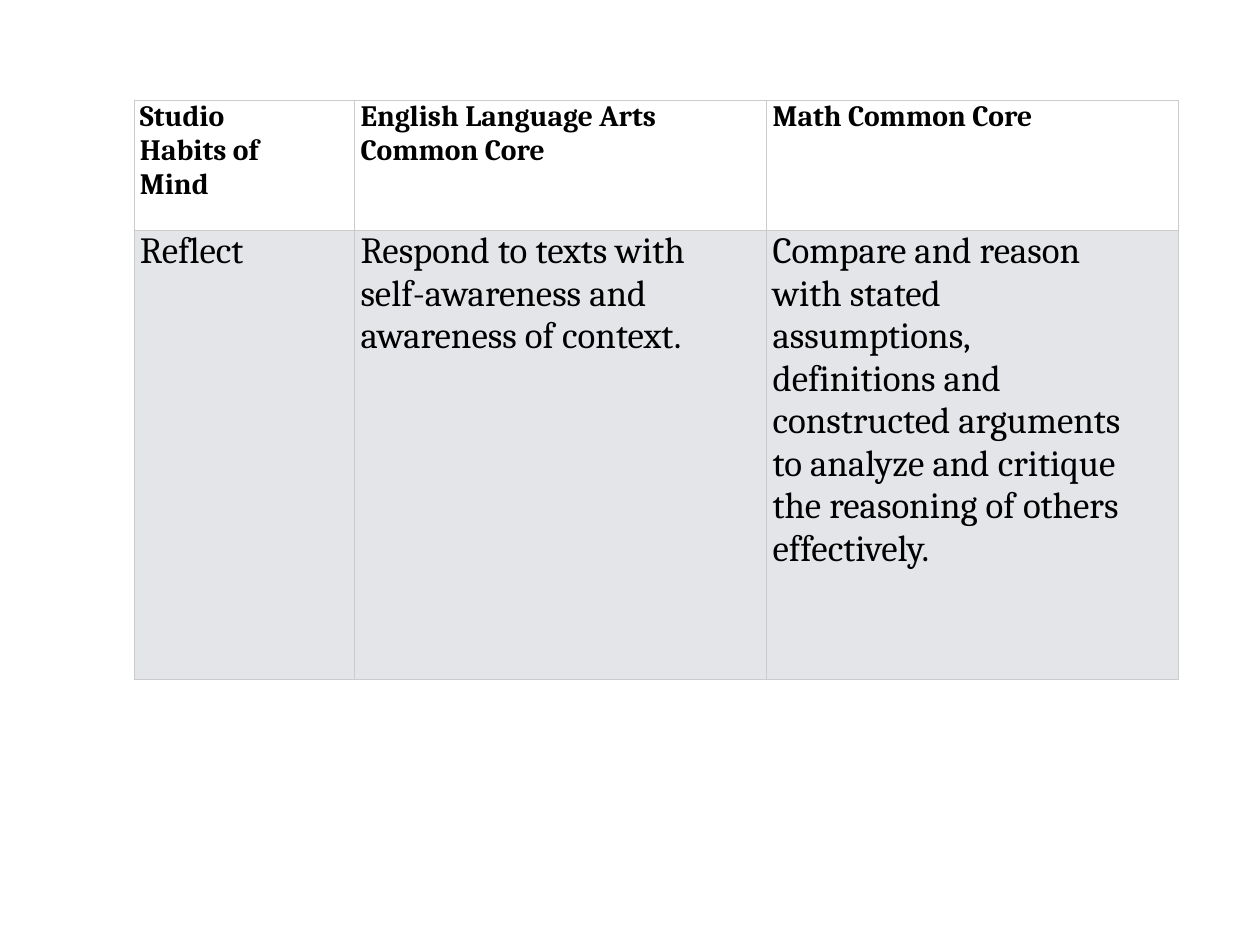
"""Build a slide with a table linking a studio habit to Common Core standards."""
import lxml.etree
import pptx
import pptx.dml.color
import pptx.oxml.ns
import pptx.util

Inches = pptx.util.Inches
Pt = pptx.util.Pt
qn = pptx.oxml.ns.qn

COLORS = {"text": "000000", "header": "FFFFFF", "body": "E3E5E8", "border": "CBCBCB"}
COL_WIDTHS = [2.49, 4.65, 4.65]
ROW_HEIGHTS = [1.47, 5.07]
MARGINS = {"margin_left": Inches(0.07), "margin_right": Inches(0.5),
           "margin_top": 0, "margin_bottom": 0}
ROW_FORMATS = [
    ("header", {"name": "Cambria", "size": Pt(24), "bold": True}),
    ("body", {"name": "Cambria", "size": Pt(30), "bold": False}),
]
STANDARDS = [
    ["Studio Habits of Mind", "English Language Arts Common Core", "Math Common Core"],
    ["Reflect",
     "Respond to texts with self-awareness and awareness of context.",
     "Compare and reason with stated assumptions, definitions and constructed "
     "arguments to analyze and critique the reasoning of others effectively."],
]


def rgb(key):
    return pptx.dml.color.RGBColor.from_string(COLORS[key])


def set_attrs(obj, values):
    for name, value in values.items():
        setattr(obj, name, value)


def add_borders(cell):
    tc_pr = cell._tc.get_or_add_tcPr()
    for side in "LRTB":
        ln = lxml.etree.SubElement(tc_pr, qn(f"a:ln{side}"), w=str(Pt(0.5)))
        fill = lxml.etree.SubElement(ln, qn("a:solidFill"))
        lxml.etree.SubElement(fill, qn("a:srgbClr"), val=COLORS["border"])


def fill_cell(cell, text, fill, font):
    set_attrs(cell, MARGINS)
    add_borders(cell)
    cell.fill.solid()
    cell.fill.fore_color.rgb = rgb(fill)
    r = cell.text_frame.paragraphs[0].add_run()
    r.text = text
    set_attrs(r.font, font)
    r.font.color.rgb = rgb("text")


def add_standards_table(s, left, top):
    table = s.shapes.add_table(
        len(ROW_HEIGHTS), len(COL_WIDTHS), Inches(left), Inches(top),
        Inches(sum(COL_WIDTHS)), Inches(sum(ROW_HEIGHTS))).table
    for column, width in zip(table.columns, COL_WIDTHS):
        column.width = Inches(width)
    for row, height, texts, (fill, font) in zip(
            table.rows, ROW_HEIGHTS, STANDARDS, ROW_FORMATS):
        row.height = Inches(height)
        for cell, text in zip(row.cells, texts):
            fill_cell(cell, text, fill, font)


def main():
    prs = pptx.Presentation()
    set_attrs(prs, {"slide_width": Inches(14.22), "slide_height": Inches(10.67)})
    s = prs.slides.add_slide(prs.slide_layouts[6])
    add_standards_table(s, 1.51, 1.13)
    prs.save("out.pptx")


if __name__ == "__main__":
    main()
